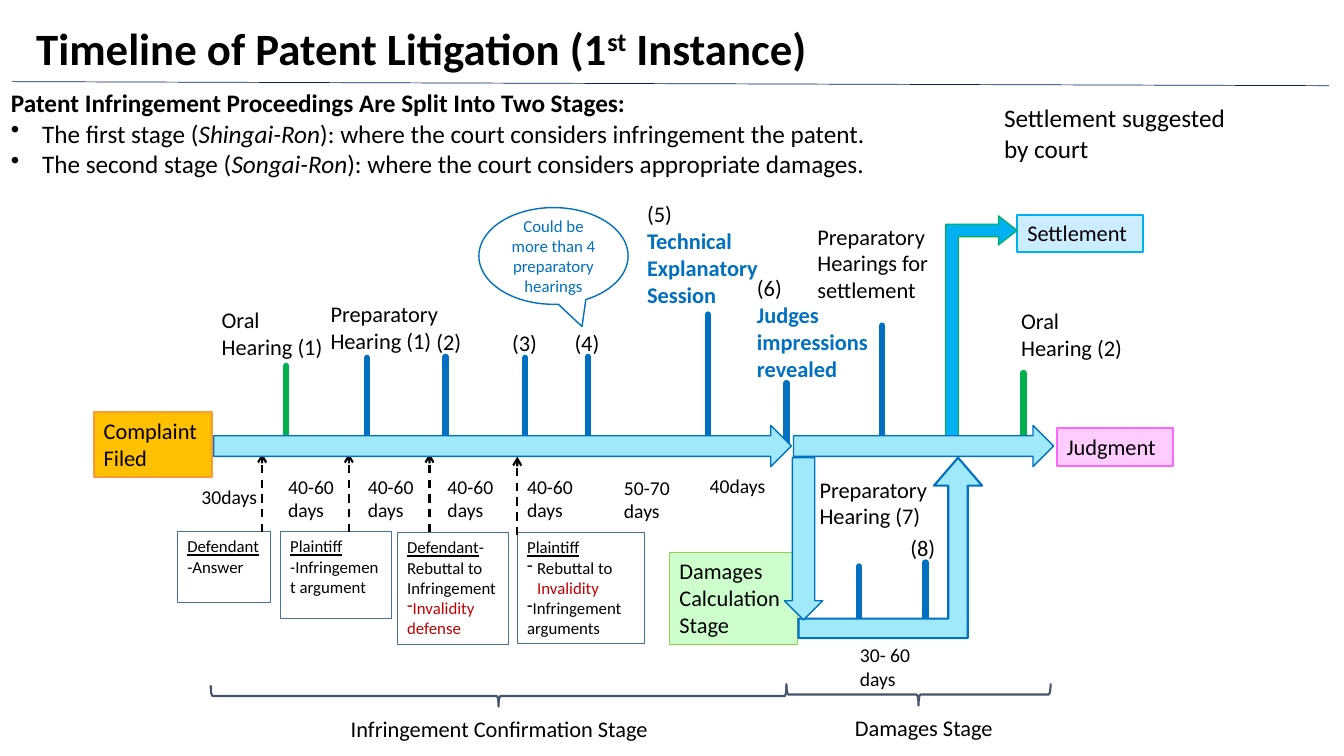
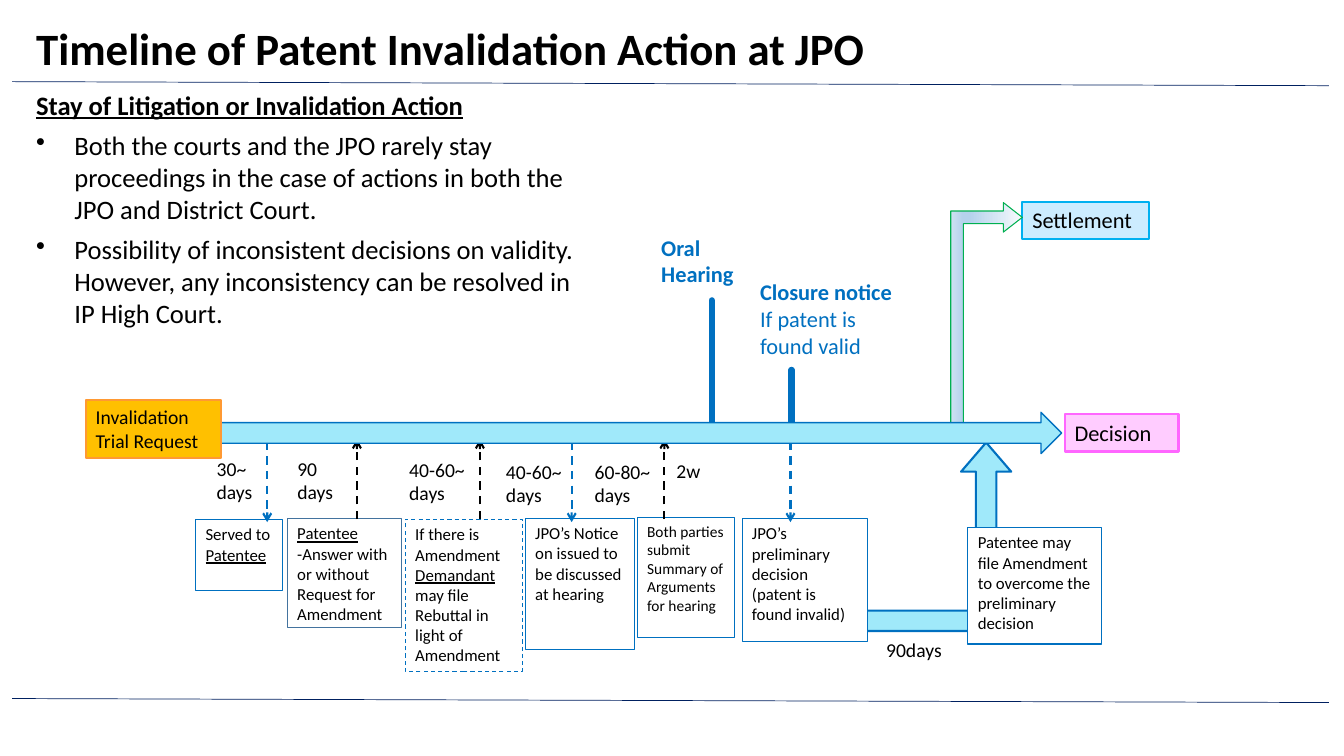
from dataclasses import dataclass

from pptx import Presentation
from pptx.dml.color import RGBColor
from pptx.enum.dml import MSO_LINE
from pptx.enum.shapes import MSO_CONNECTOR, MSO_SHAPE as SHAPE
from pptx.enum.text import MSO_ANCHOR as ANCHOR, PP_ALIGN as ALIGN
from pptx.oxml.xmlchemy import OxmlElement as element
from pptx.util import Inches, Pt

# Shared style
FONT = "Calibri"
BLACK = RGBColor(0x00, 0x00, 0x00)
WHITE = RGBColor(0xFF, 0xFF, 0xFF)
NAVY = RGBColor(0x00, 0x20, 0x60)
BLUE = RGBColor(0x00, 0x70, 0xC0)
STEEL = RGBColor(0x43, 0x73, 0x9E)
SLATE = RGBColor(0x44, 0x54, 0x6A)
SKY = RGBColor(0x00, 0xB0, 0xF0)
ICE = RGBColor(0xCC, 0xEC, 0xFF)
AQUA = RGBColor(0xA0, 0xE9, 0xFA)
GREEN = RGBColor(0x00, 0xB0, 0x50)
LIME = RGBColor(0x92, 0xD0, 0x50)
MINT = RGBColor(0xCC, 0xFF, 0xCC)
AMBER = RGBColor(0xFF, 0xC0, 0x00)
ORANGE = RGBColor(0xFF, 0x99, 0x33)
PINK = RGBColor(0xFF, 0xCC, 0xFF)
MAGENTA = RGBColor(0xFF, 0x66, 0xFF)
RED = RGBColor(0xC0, 0x00, 0x00)
PALE_BLUES = [(0, "F7FAFD"), (74, "B5D2EC"), (83, "B5D2EC"), (100, "CEE1F2")]

BOLD = {"bold": True}
ITALIC = {"italic": True}
UNDERLINE = {"underline": True}
BLUE_BOLD = {"bold": True, "color": BLUE}
FLOW_BENDS = (0.108, 0.133, 0.155)
EXIT_BENDS = (0.177, 0.206, 0.265)


@dataclass
class Para:
    """Runs are plain strings or (string, format) pairs."""
    runs: list
    bullet: str = ""
    indent: float = 0
    after: float = 0


# Text
def format_run(run, values):
    for name, value in values.items():
        if name == "color":
            run.font.color.rgb = value
        elif name == "baseline":
            run.font._element.set("baseline", str(value))
        else:
            setattr(run.font, name, value)


def add_bullet(paragraph, mark, indent):
    props = paragraph._p.get_or_add_pPr()
    props.set("marL", str(Inches(indent)))
    props.set("indent", str(-Inches(indent)))
    bullet = element("a:buChar")
    bullet.set("char", mark)
    props.append(bullet)


def write(shape, paras, size, color=BLACK, align=ALIGN.LEFT, anchor=ANCHOR.TOP):
    frame = shape.text_frame
    frame.word_wrap = True
    frame.vertical_anchor = anchor
    base = {"name": FONT, "size": Pt(size), "color": color}
    for i, para in enumerate(paras):
        para = para if isinstance(para, Para) else Para([para])
        paragraph = frame.add_paragraph() if i else frame.paragraphs[0]
        paragraph.alignment = align
        paragraph.space_after = Pt(para.after)
        if para.bullet:
            add_bullet(paragraph, para.bullet, para.indent)
        for part in para.runs:
            text, extra = (part, {}) if isinstance(part, str) else part
            run = paragraph.add_run()
            run.text = text
            format_run(run, {**base, **extra})


def label(slide, at, *paras, size=16, **style):
    box = slide.shapes.add_textbox(*map(Inches, at))
    write(box, paras, size, **style)


# Shapes and lines
def figure(slide, kind, at, fill, line, width, bends=(), turn=0, flip=False):
    shape = slide.shapes.add_shape(kind, *map(Inches, at))
    shape.shadow.inherit = False
    shape.rotation = turn
    if fill is None:
        shape.fill.background()
    else:
        shape.fill.solid()
        shape.fill.fore_color.rgb = fill
    shape.line.color.rgb = line
    shape.line.width = Pt(width)
    for i, bend in enumerate(bends):
        shape.adjustments[i] = bend
    if flip:
        shape._element.spPr.xfrm.set("flipH", "1")
    return shape


def box(slide, at, *paras, fill=WHITE, line=BLUE, width=0.75, size=12):
    shape = figure(slide, SHAPE.RECTANGLE, at, fill, line, width)
    write(shape, paras, size)
    return shape


def shade(shape, stops):
    shape.fill.gradient()
    grad = shape._element.spPr.find(".//{*}gradFill")
    for child in list(grad):
        grad.remove(child)
    stop_list = element("a:gsLst")
    for position, tone in stops:
        stop = element("a:gs")
        stop.set("pos", str(position * 1000))
        color = element("a:srgbClr")
        color.set("val", tone)
        stop.append(color)
        stop_list.append(stop)
    direction = element("a:lin")
    direction.set("ang", "5400000")
    direction.set("scaled", "0")
    grad.extend([stop_list, direction])


def stroke(slide, x1, y1, x2, y2, color, width):
    line = slide.shapes.add_connector(
        MSO_CONNECTOR.STRAIGHT, *map(Inches, (x1, y1, x2, y2)))
    line.line.color.rgb = color
    line.line.width = Pt(width)
    line._element.spPr.append(element("a:effectLst"))
    return line


def tick(slide, x, top, bottom=4.43, color=BLUE):
    line = stroke(slide, x, top, x, bottom, color, 4.5)
    line._element.spPr.get_or_add_ln().set("cap", "rnd")


def dashed_arrow(slide, x, start, end, color=BLACK):
    line = stroke(slide, x, start, x, end, color, 1.5)
    line.line.dash_style = MSO_LINE.DASH
    head = element("a:tailEnd")
    head.set("type", "arrow")
    line._element.spPr.get_or_add_ln().append(head)


# Elements both slides use
def rule(slide, y):
    stroke(slide, 0.12, y, 13.18, y + 0.04, NAVY, 0.5)


def page(deck, *title):
    slide = deck.slides.add_slide(deck.slide_layouts[6])
    runs = [(text, {**BOLD, **extra}) for text, extra in title]
    label(slide, (0.26, 0.06, 12.21, 0.82), Para(runs), size=32, anchor=ANCHOR.MIDDLE)
    rule(slide, 0.81)
    return slide


def timeline(slide, left, top, width):
    figure(slide, SHAPE.RIGHT_ARROW, (left, top, width, 0.41), AQUA, BLUE, 1)


def start_box(slide, at, *paras, size):
    box(slide, at, *paras, fill=AMBER, line=ORANGE, width=1.5, size=size)


def outcome(slide, at, text):
    box(slide, at, text, fill=PINK, line=MAGENTA, width=1.5, size=16)


def settlement(slide, left, top, width):
    box(slide, (left, top, width, 0.37), "Settlement",
        fill=ICE, line=SKY, width=1.5, size=16)
    return figure(slide, SHAPE.BENT_UP_ARROW, (left - 1.5, top + 0.8, 2.29, 0.71),
                  SKY, GREEN, 0.75, EXIT_BENDS, turn=90, flip=True)


def flow_arrow(slide, at):
    figure(slide, SHAPE.BENT_UP_ARROW, at, AQUA, BLUE, 1.5, FLOW_BENDS)


def litigation(deck):
    slide = page(deck, ("Timeline of Patent Litigation (1", {}),
                 ("st", {"baseline": 30000}), (" Instance)", {}))

    # Introduction
    stages = [("The first stage (", "Shingai-Ron",
               "): where the court considers infringement the patent."),
              ("The second stage (", "Songai-Ron",
               "): where the court considers appropriate damages.")]
    label(slide, (0.01, 0.82, 9.16, 1.01),
          Para([("Patent Infringement Proceedings Are Split Into Two Stages:", BOLD)]),
          *[Para([before, (name, ITALIC), after], "•", 0.31)
            for before, name, after in stages], size=18)
    label(slide, (9.86, 0.97, 2.53, 0.71), "Settlement suggested by court", size=18)

    # Hearings
    for at, paras in [
        ((2.1, 2.99, 1.22, 0.64), ["Oral", "Hearing (1)"]),
        ((3.18, 2.93, 1.54, 0.64), ["Preparatory", "Hearing (1)"]),
        ((4.23, 3.21, 0.47, 0.37), ["(2)"]),
        ((4.98, 3.22, 0.49, 0.37), ["(3)"]),
        ((5.6, 3.22, 0.57, 0.37), ["(4)"]),
        ((6.32, 1.94, 1.34, 1.18), ["(5)", ("Technical Explanatory Session", BLUE_BOLD)]),
        ((7.41, 2.67, 1.57, 1.18), ["(6)", ("Judges impressions revealed", BLUE_BOLD)]),
        ((8.01, 2.16, 1.54, 0.91), ["Preparatory", "Hearings for settlement"]),
        ((10.03, 3, 1.22, 0.64), ["Oral", "Hearing (2)"]),
        ((8.03, 4.67, 1.38, 0.64), ["Preparatory", "Hearing (7)"]),
        ((8.93, 5.25, 1.22, 0.37), ["(8)"]),
        ((3.38, 7.05, 3.49, 0.37), ["Infringement Confirmation Stage"]),
        ((8.38, 7.04, 3.49, 0.37), ["Damages Stage"]),
    ]:
        label(slide, at, *paras)

    # Intervals
    intervals = [(1.9, 4.76, 0.95, "30days"), (6.09, 4.67, 0.7, "50-70 days"),
                 (6.94, 4.65, 0.77, "40days"), (8.43, 6.33, 0.71, "30- 60 days")]
    intervals += [(2.76 + 0.79 * i, 4.66, 0.7, "40-60 days") for i in range(4)]
    for left, top, width, text in intervals:
        label(slide, (left, top, width, 0.57), text, size=14)

    # Filings
    for at, paras in [
        ((1.76, 5.27, 0.92, 0.71), [("Defendant", UNDERLINE), "-Answer"]),
        ((2.78, 5.27, 1.1, 0.87), [("Plaintiff", UNDERLINE), "-Infringement argument"]),
        ((3.94, 5.28, 1.1, 1.11),
         [Para([("Defendant", UNDERLINE), "-Rebuttal to Infringement"]),
          Para([("Invalidity defense", {"color": RED})], "-")]),
        ((5.13, 5.28, 1.26, 1.1),
         [("Plaintiff", UNDERLINE),
          Para(["Rebuttal to ", ("Invalidity", {"color": RED})], "-", 0.1),
          Para(["Infringement arguments"], "-")]),
    ]:
        # A (text, format) pair on its own is one run
        box(slide, at, *paras, line=STEEL)
    for x, start in [(2.6, 5.28), (3.46, 5.28), (4.26, 5.28), (5.13, 5.31)]:
        dashed_arrow(slide, x, start, start - 0.78)

    # Start, outcomes and stages
    start_box(slide, (0.93, 4.09, 1.17, 0.64), "Complaint", "Filed", size=16)
    outcome(slide, (10.48, 4.25, 1.15, 0.37), "Judgment")
    box(slide, (6.64, 5.48, 1.27, 0.91), "Damages Calculation Stage",
        fill=MINT, line=LIME, size=16)
    settlement(slide, 10.09, 2.13, 1.25)
    for x, top in [(3.64, 3.55), (4.42, 3.54), (5.21, 3.55), (5.83, 3.54),
                   (7.02, 3.12), (7.8, 3.8), (8.75, 3.23)]:
        tick(slide, x, top)
    for x, top in [(2.84, 3.63), (10.15, 3.7)]:
        tick(slide, x, top, color=GREEN)
    for x, top in [(8.52, 5.62), (9.18, 5.58)]:
        tick(slide, x, top, 6.29)
    callout = figure(slide, SHAPE.OVAL_CALLOUT, (4.75, 2.06, 1.48, 0.96),
                     None, BLUE, 1, (0.191, 0.73))
    write(callout, ["Could be more than 4 preparatory hearings"], 12,
          BLUE, ALIGN.CENTER, ANCHOR.MIDDLE)
    timeline(slide, 2.12, 4.22, 5.73)
    flow_arrow(slide, (7.92, 4.54, 1.82, 1.79))
    timeline(slide, 7.87, 4.22, 2.58)
    for at in [(4.84, 4.05, 0.21, 5.71), (9, 5.58, 0.22, 2.62)]:
        figure(slide, SHAPE.LEFT_BRACE, at, None, SLATE, 1.5, turn=270)
    figure(slide, SHAPE.DOWN_ARROW, (7.78, 4.54, 0.38, 1.61), AQUA, BLUE, 1, (0.584, 0.5))


def invalidation(deck):
    slide = page(deck, ("Timeline of Patent Invalidation Action at JPO", {}))
    rule(slide, 6.93)

    # Introduction
    points = ["Both the courts and the JPO rarely stay proceedings in the case of "
              "actions in both the JPO and District Court.",
              "Possibility of inconsistent decisions on validity. However, any "
              "inconsistency can be resolved in IP High Court."]
    label(slide, (0.26, 0.83, 5.54, 2.73),
          Para([("Stay of Litigation or Invalidation Action", {**BOLD, **UNDERLINE})],
               after=6),
          *[Para([point], "•", 0.38, 6) for point in points], size=19)

    # Intervals and hearing
    for left, top, width, text in [
        (2.05, 4.48, 0.71, "30~ days"), (2.85, 4.48, 0.71, "90 days"),
        (3.96, 4.49, 0.89, "40-60~ days"), (4.92, 4.51, 0.82, "40-60~ days"),
        (5.8, 4.51, 0.86, "60-80~ days"), (6.61, 4.5, 0.54, "2w"),
        (8.69, 6.28, 0.9, "90days"),
    ]:
        label(slide, (left, top, width, 0.57), text, size=14)
    label(slide, (6.46, 2.27, 1.26, 0.64), ("Oral Hearing", BOLD), color=BLUE)
    label(slide, (7.44, 2.71, 1.56, 0.91), ("Closure notice", BOLD),
          "If patent is found valid", color=BLUE)
    tick(slide, 7.06, 2.98, 4.3)
    tick(slide, 7.85, 3.67, 4.3)

    # Outcomes
    shade(settlement(slide, 10.14, 2, 1.26), PALE_BLUES)
    outcome(slide, (10.56, 4.11, 1.13, 0.37), "Decision")
    flow_arrow(slide, (8.1, 4.39, 1.93, 1.87))

    # Steps
    box(slide, (1.94, 5.15, 0.86, 0.71), "Served to", ("Patentee", UNDERLINE))
    box(slide, (2.85, 5.14, 1.13, 1.09), ("Patentee", UNDERLINE),
        "-Answer with or without Request for Amendment", line=STEEL)
    rebuttal = box(slide, (4.02, 5.15, 1.16, 1.51), "If there is Amendment",
                   ("Demandant", UNDERLINE), "may file Rebuttal in light of Amendment")
    rebuttal.line.dash_style = MSO_LINE.DASH
    for at, text, size in [
        ((5.21, 5.14, 1.08, 1.3), "JPO’s Notice on issued to be discussed at hearing", 12),
        ((6.32, 5.13, 0.97, 1.19),
         "Both parties submit Summary of Arguments for hearing", 11),
        ((7.36, 5.14, 1.24, 1.22),
         "JPO’s preliminary decision (patent is found invalid)", 12),
        ((9.6, 5.23, 1.33, 1.16),
         "Patentee may file Amendment to overcome the preliminary decision", 12),
    ]:
        box(slide, at, text, size=size)
    for x in (3.54, 4.76, 6.59):
        dashed_arrow(slide, x, 5.15, 4.36)
    for x in (2.65, 5.67, 7.84):
        dashed_arrow(slide, x, 4.38, 5.18, BLUE)

    timeline(slide, 2.17, 4.09, 8.36)
    start_box(slide, (0.85, 3.97, 1.34, 0.57), "Invalidation Trial Request", size=14)


def main():
    deck = Presentation()
    deck.slide_width, deck.slide_height = Inches(13.33), Inches(7.5)
    litigation(deck)
    invalidation(deck)
    deck.save("out.pptx")


if __name__ == "__main__":
    main()
